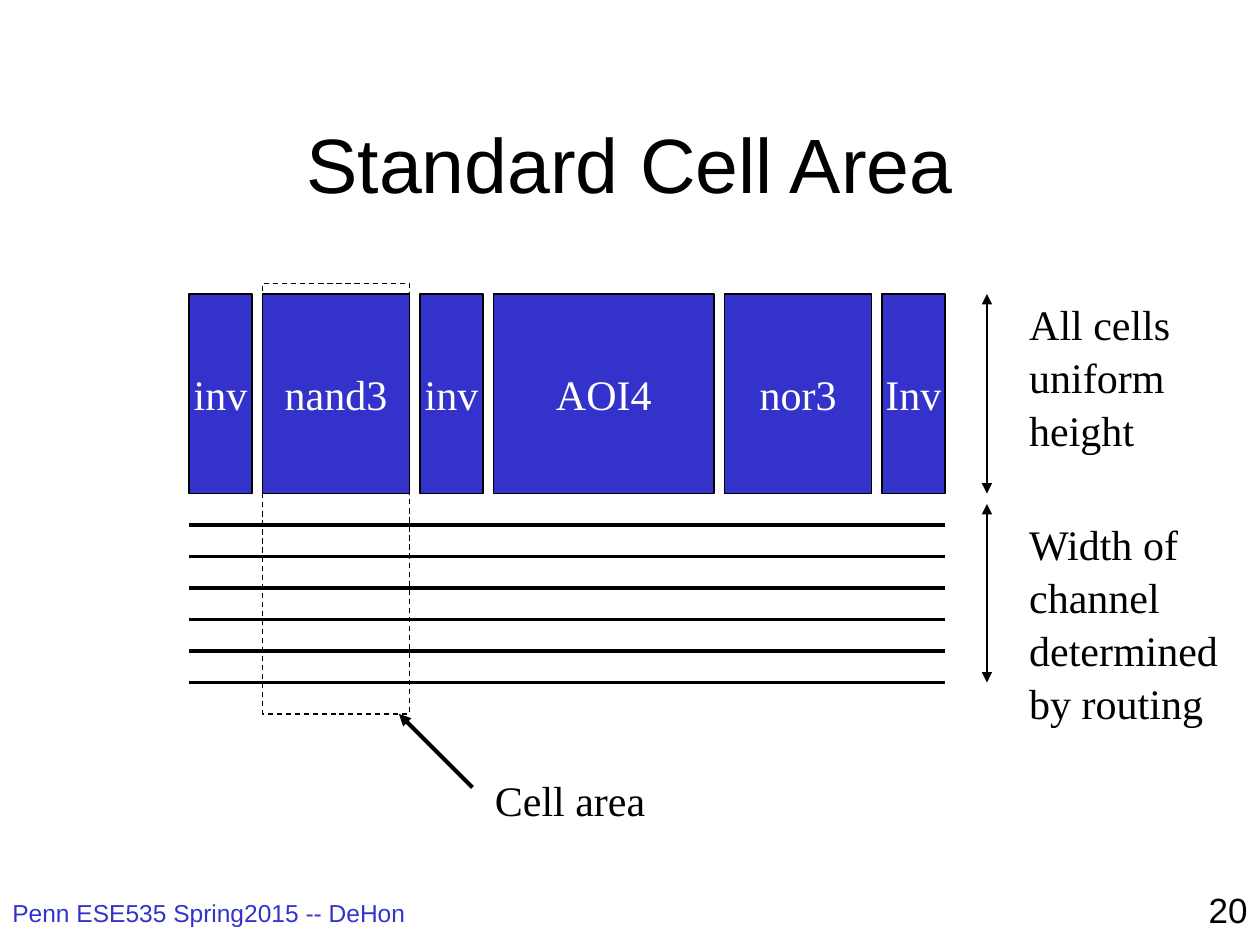
from lxml import etree
from pptx import Presentation
from pptx.dml.color import RGBColor
from pptx.enum.dml import MSO_LINE
from pptx.enum.shapes import MSO_CONNECTOR, MSO_SHAPE
from pptx.enum.text import MSO_ANCHOR, MSO_AUTO_SIZE, PP_ALIGN
from pptx.oxml.ns import qn
from pptx.util import Inches, Pt

RECTANGLE = MSO_SHAPE.RECTANGLE
STRAIGHT = MSO_CONNECTOR.STRAIGHT
DASH = MSO_LINE.DASH
MIDDLE = MSO_ANCHOR.MIDDLE
FIT_SHAPE = MSO_AUTO_SIZE.SHAPE_TO_FIT_TEXT
LEFT, CENTER, RIGHT = PP_ALIGN.LEFT, PP_ALIGN.CENTER, PP_ALIGN.RIGHT

COLORS = {"ink": "000000", "cell": "3333CC", "paper": "FFFFFF"}
SANS, SERIF = "Arial", "Times New Roman"

UNIT = 1 / 12  # grid step of the diagram, in inches
CELLS = [("inv", 6), ("nand3", 14), ("inv", 6), ("AOI4", 21), ("nor3", 14), ("Inv", 6)]
CELL_GAP = 1
TRACK_COUNT, TRACK_PITCH = 6, 0.25


def color(name):
    return RGBColor.from_string(COLORS[name])


def write(frame, lines, size, font, ink="ink", align=LEFT, spacing=None):
    for index, line in enumerate(lines):
        paragraph = frame.paragraphs[0] if index == 0 else frame.add_paragraph()
        paragraph.alignment = align
        paragraph.line_spacing = spacing
        run = paragraph.add_run()
        run.text = line
        run.font.size = Pt(size)
        run.font.name = font
        run.font.color.rgb = color(ink)


def add_text(slide, box, lines, size, font, ink="ink", align=LEFT):
    frame = slide.shapes.add_textbox(*map(Inches, box)).text_frame
    frame.word_wrap = True
    write(frame, lines, size, font, ink, align)


def add_label(slide, box, lines):
    frame = slide.shapes.add_textbox(*map(Inches, box)).text_frame
    frame.word_wrap = False
    frame.auto_size = FIT_SHAPE
    write(frame, lines, 24, SERIF, spacing=1.05)


def add_rectangle(slide, box, fill=None):
    rectangle = slide.shapes.add_shape(RECTANGLE, *map(Inches, box))
    rectangle.shadow.inherit = False
    if fill:
        rectangle.fill.solid()
        rectangle.fill.fore_color.rgb = color(fill)
    else:
        rectangle.fill.background()
    rectangle.line.color.rgb = color("ink")
    rectangle.line.width = Pt(0.75)
    return rectangle


def add_line(slide, start, end, width, arrows=()):
    line = slide.shapes.add_connector(STRAIGHT, *map(Inches, (*start, *end)))
    line.line.color.rgb = color("ink")
    line.line.width = Pt(width)
    for arrow in arrows:
        etree.SubElement(line.line._get_or_add_ln(), qn(arrow), type="triangle")
    etree.SubElement(line._element.spPr, qn("a:effectLst"))


def add_title(slide, box):
    title = slide.shapes.title
    title.left, title.top, title.width, title.height = map(Inches, box)
    title.text_frame.vertical_anchor = MIDDLE
    write(title.text_frame, ["Standard Cell Area"], 44, SANS, align=CENTER)


def add_footer(slide, left, bottom, width):
    add_text(slide, (left, bottom - 0.42, 3.83, 0.42),
             ["Penn ESE535 Spring2015 -- DeHon"], 14, SANS, "cell")
    add_text(slide, (left + width - 2.08, bottom - 0.5, 2.08, 0.5),
             ["20"], 20, SANS, align=RIGHT)


def add_cell_row(slide, left, top, height):
    for name, units in CELLS:
        cell = add_rectangle(slide, (left, top, units * UNIT, height), "cell")
        frame = cell.text_frame
        frame.word_wrap = False
        frame.vertical_anchor = MIDDLE
        write(frame, [name], 24, SERIF, "paper", CENTER)
        left += (units + CELL_GAP) * UNIT


def add_channel(slide, left, top, width):
    for track in range(TRACK_COUNT):
        y = top + track * TRACK_PITCH
        add_line(slide, (left, y), (left + width, y), 2.25)


def add_dimension(slide, x, top, bottom, label_box, lines):
    add_line(slide, (x, top), (x, bottom), 1.5, ("a:headEnd", "a:tailEnd"))
    add_label(slide, label_box, lines)


def add_cell_area(slide, left, top, width, height):
    outline = add_rectangle(slide, (left, top, width, height))
    outline.line.dash_style = DASH
    right, bottom = left + width, top + height
    add_line(slide, (right - UNIT, bottom), (right + 0.5, bottom + 7 * UNIT),
             2.25, ("a:headEnd",))
    add_label(slide, (right + 0.58, bottom + 0.41, 1.39, 0.5), ["Cell area"])


def main():
    deck = Presentation()
    deck.slide_width, deck.slide_height = Inches(10), Inches(7.5)
    slide = deck.slides.add_slide(deck.slide_layouts[5])

    # Title and footer
    add_title(slide, (0.75, 0.67, 8.5, 1.25))
    add_footer(slide, 0, 7.5, 10)

    # Row of cells above the routing channel
    left, top, width, height = 1.5, 28 * UNIT, 6, 19 * UNIT
    channel_top = top + height + 0.25
    channel_bottom = channel_top + (TRACK_COUNT - 1) * TRACK_PITCH
    add_cell_row(slide, left, top, height)
    add_channel(slide, left, channel_top, width)

    # Area taken by the nand3 cell
    add_cell_area(slide, left + 7 * UNIT, top - UNIT, 14 * UNIT, 41 * UNIT)

    # Height dimensions on the right
    dimension_x = left + width + 4 * UNIT
    add_dimension(slide, dimension_x, top, top + height, (8.07, 2.3, 1.32, 1.3),
                  ["All cells", "uniform", "height"])
    add_dimension(slide, dimension_x, top + height + UNIT, channel_bottom,
                  (8.07, 4.05, 1.7, 1.7),
                  ["Width of", "channel", "determined", "by routing"])

    deck.save("out.pptx")


if __name__ == "__main__":
    main()
